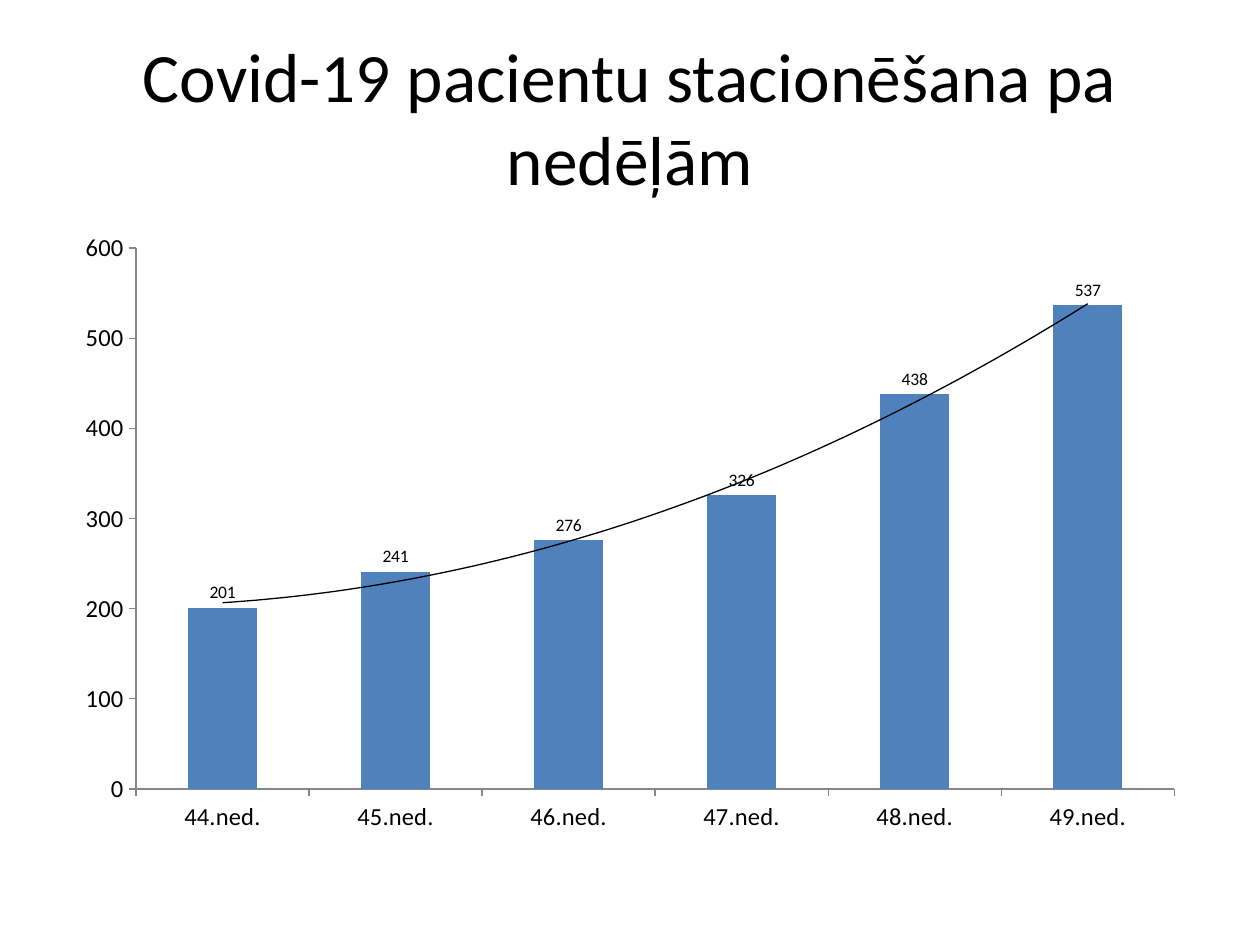
from lxml.etree import SubElement
from pptx import Presentation
from pptx.chart.data import CategoryChartData
from pptx.dml.color import RGBColor
from pptx.enum.chart import XL_CHART_TYPE, XL_LABEL_POSITION, XL_TICK_MARK
from pptx.enum.text import MSO_ANCHOR, PP_ALIGN
from pptx.oxml import parse_xml
from pptx.oxml.ns import nsdecls, qn
from pptx.util import Inches, Pt

COLORS = {"text": "000000", "bar": "4F81BD", "axis": "868686", "trend": "000000"}
WEEKS = [f"{week}.ned." for week in range(44, 50)]
COUNTS = [201, 241, 276, 326, 438, 537]


def apply(target, values):
    """Set every attribute in values on the target."""
    for name, value in values.items():
        setattr(target, name, value)


class Deck:
    """Hold the style and the current slide."""

    def __init__(self, name="Calibri"):
        """Start a deck with one blank slide."""
        self.name = name
        self.file = Presentation()
        apply(self.file, {"slide_width": Inches(10), "slide_height": Inches(7.5)})
        self.slide = self.file.slides.add_slide(self.file.slide_layouts[6])

    def color(self, key):
        """Return a named colour."""
        return RGBColor.from_string(COLORS[key])

    def font(self, font, size):
        """Style a font in the text colour."""
        apply(font, {"name": self.name, "size": Pt(size), "bold": False})
        font.color.rgb = self.color("text")

    def title(self, text, box):
        """Add the centred heading."""
        frame = self.slide.shapes.add_textbox(*map(Inches, box)).text_frame
        apply(frame, {"word_wrap": True, "vertical_anchor": MSO_ANCHOR.MIDDLE})
        line = frame.paragraphs[0]
        apply(line, {"text": text, "alignment": PP_ALIGN.CENTER})
        self.font(line.runs[0].font, 39.6)

    def axis(self, axis):
        """Style a chart axis."""
        apply(axis, {
            "has_major_gridlines": False,
            "major_tick_mark": XL_TICK_MARK.OUTSIDE,
            "minor_tick_mark": XL_TICK_MARK.NONE,
        })
        self.font(axis.tick_labels.font, 14)
        axis.format.line.color.rgb = self.color("axis")
        axis.format.line.width = Pt(0.75)

    def trend(self, series):
        """Add a quadratic trend line to a series."""
        trend = parse_xml(f"<c:trendline {nsdecls('c', 'a')}/>")
        look = SubElement(trend, qn("c:spPr"))
        line = SubElement(look, qn("a:ln"), w=str(Pt(0.75)))
        fill = SubElement(line, qn("a:solidFill"))
        SubElement(fill, qn("a:srgbClr"), val=COLORS["trend"])
        parts = {"trendlineType": "poly", "order": "2", "dispRSqr": "0", "dispEq": "0"}
        for tag, value in parts.items():
            SubElement(trend, qn(f"c:{tag}"), val=value)
        series._element.find(qn("c:cat")).addprevious(trend)

    def chart(self, names, values, box):
        """Add the column chart with labels and a trend."""
        data = CategoryChartData()
        data.categories = names
        data.add_series("Series 1", values)
        chart = self.slide.shapes.add_chart(
            XL_CHART_TYPE.COLUMN_CLUSTERED, *map(Inches, box), data
        ).chart
        apply(chart, {"has_legend": False, "has_title": False})
        self.font(chart.font, 10)
        for axis in (chart.category_axis, chart.value_axis):
            self.axis(axis)
        apply(chart.value_axis, {
            "minimum_scale": 0, "maximum_scale": 600, "major_unit": 100,
        })
        plot = chart.plots[0]
        apply(plot, {"gap_width": 150, "vary_by_categories": False})
        series = plot.series[0]
        series.format.fill.solid()
        series.format.fill.fore_color.rgb = self.color("bar")
        labels = series.data_labels
        apply(labels, {"show_value": True, "position": XL_LABEL_POSITION.OUTSIDE_END})
        self.font(labels.font, 10)
        self.trend(series)


def main():
    """Build and save the slide."""
    deck = Deck()
    deck.title("Covid-19 pacientu stacionēšana pa nedēļām", (0.5, 0.3, 9, 1.25))
    deck.chart(WEEKS, COUNTS, (0.5, 1.75, 9, 4.95))
    deck.file.save("out.pptx")


if __name__ == "__main__":
    main()
